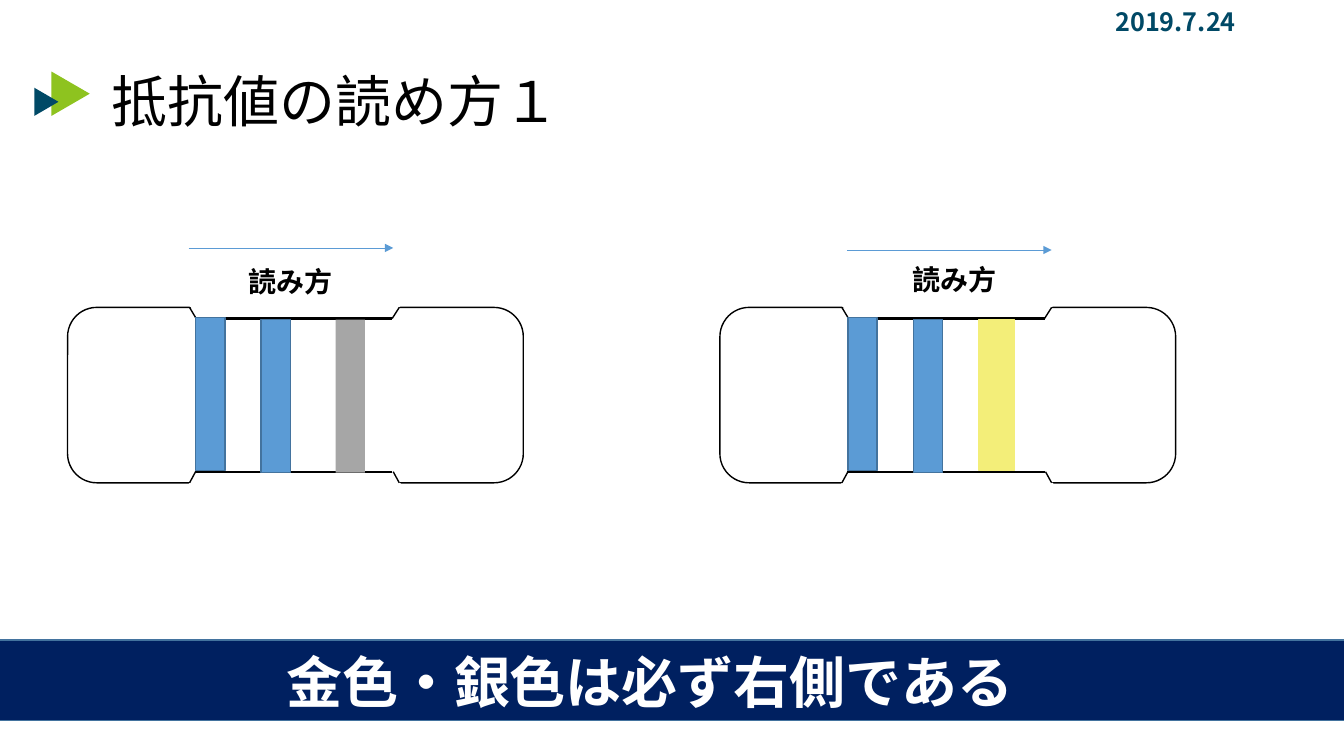
from dataclasses import dataclass
from typing import Any, Optional

from lxml import etree
from pptx import Presentation
from pptx.dml.color import RGBColor
from pptx.enum.shapes import MSO_CONNECTOR, MSO_SHAPE
from pptx.enum.text import MSO_ANCHOR, PP_ALIGN
from pptx.oxml.ns import qn
from pptx.util import Inches, Pt

RECT = MSO_SHAPE.RECTANGLE
ROUND_RECT = MSO_SHAPE.ROUNDED_RECTANGLE
SNIP_RECT = MSO_SHAPE.SNIP_2_SAME_RECTANGLE
TRIANGLE = MSO_SHAPE.ISOSCELES_TRIANGLE
STRAIGHT = MSO_CONNECTOR.STRAIGHT
TOP, BOTTOM = MSO_ANCHOR.TOP, MSO_ANCHOR.BOTTOM
LEFT, CENTER = PP_ALIGN.LEFT, PP_ALIGN.CENTER


@dataclass(frozen=True)
class Theme:
    black: str = "000000"
    white: str = "FFFFFF"
    green: str = "8EC31F"
    teal: str = "004966"
    navy: str = "002060"
    blue: str = "5B9BD5"
    blue_edge: str = "43739E"
    silver: str = "A6A6A6"
    gold: str = "F3EE79"
    title_font: str = "Calibri"
    date_font: str = "Noto Sans CJK SC"
    body_font: str = "Cabin"
    title_size: int = 40
    label_size: int = 20
    date_size: int = 18


T = Theme()


@dataclass(frozen=True)
class Box:
    x: float
    y: float
    w: float
    h: float


@dataclass(frozen=True)
class Band:
    """Colour band; the box is measured from the resistor's left edge."""
    box: Box
    fill: str
    edge: Optional[str] = None


@dataclass(frozen=True)
class Line:
    x1: float
    y1: float
    x2: float
    y2: float
    width: float = 1


@dataclass(frozen=True)
class Resistor:
    x: float
    bands: tuple[Band, ...]
    arrow_x: float
    arrow_y: float
    label_x: float
    label_y: float


@dataclass(frozen=True)
class Caption:
    text: str
    box: Box
    font: str
    size: int
    color: str
    bold: bool = True
    anchor: Any = BOTTOM
    align: Any = LEFT


BLUE_BANDS = (
    Band(Box(1.27, 3.15, 0.29, 1.52), T.blue, T.blue_edge),
    Band(Box(1.92, 3.17, 0.29, 1.52), T.blue, T.blue_edge),
)
RESISTORS = (
    Resistor(0.67, BLUE_BANDS + (Band(Box(2.66, 3.17, 0.29, 1.52), T.silver),),
             1.87, 2.46, 2.37, 2.08),
    Resistor(7.14, BLUE_BANDS + (Band(Box(2.57, 3.17, 0.35, 1.5), T.gold, T.gold),),
             8.4, 2.48, 8.95, 2.06),
)
# Outline of the narrow waist, measured from the resistor's left edge
WAIST = (
    Line(1.21, 3.05, 1.27, 3.15), Line(1.26, 3.16, 3.22, 3.16, 1.5),
    Line(3.29, 3.05, 3.22, 3.16),
    Line(1.27, 4.68, 1.21, 4.79), Line(1.26, 4.68, 3.22, 4.68, 1.5),
    Line(3.23, 4.68, 3.29, 4.79),
)
CAPTIONS = (
    Caption("抵抗値の読め方１", Box(1.01, 0.46, 8.76, 0.93),
            T.title_font, T.title_size, T.black, bold=False),
    Caption("2019.7.24", Box(9.74, 0.05, 3.84, 0.41),
            T.date_font, T.date_size, T.teal, anchor=TOP, align=CENTER),
    Caption("金色・銀色は必ず右側である", Box(2.74, 6.22, 8.76, 0.93),
            T.body_font, T.title_size, T.white),
) + tuple(
    Caption("読み方", Box(res.label_x, res.label_y, 8.76, 0.93),
            T.body_font, T.label_size, T.black)
    for res in RESISTORS
)


def add_shape(shapes: Any, kind: Any, box: Box, fill: str,
              edge: Optional[str] = None, rotation: float = 0) -> Any:
    sp = shapes.add_shape(kind, Inches(box.x), Inches(box.y),
                          Inches(box.w), Inches(box.h))
    sp.shadow.inherit = False
    sp.rotation = rotation
    sp.fill.solid()
    sp.fill.fore_color.rgb = RGBColor.from_string(fill)
    if edge:
        sp.line.color.rgb = RGBColor.from_string(edge)
        sp.line.width = Pt(1)
    else:
        sp.line.fill.background()
    return sp


def add_line(shapes: Any, line: Line, color: str, dx: float = 0,
             arrow: bool = False) -> None:
    cx = shapes.add_connector(STRAIGHT, Inches(line.x1 + dx), Inches(line.y1),
                              Inches(line.x2 + dx), Inches(line.y2))
    cx.line.color.rgb = RGBColor.from_string(color)
    cx.line.width = Pt(line.width)
    if arrow:
        etree.SubElement(cx.line._get_or_add_ln(), qn("a:tailEnd"), type="triangle")
    etree.SubElement(cx._element.spPr, qn("a:effectLst"))


def add_caption(shapes: Any, cap: Caption) -> None:
    box = cap.box
    tf = shapes.add_textbox(Inches(box.x), Inches(box.y),
                            Inches(box.w), Inches(box.h)).text_frame
    tf.word_wrap = True
    tf.vertical_anchor = cap.anchor
    p = tf.paragraphs[0]
    p.alignment = cap.align
    p.line_spacing = 0.9
    r = p.add_run()
    r.text = cap.text
    r.font.name = cap.font
    r.font.size = Pt(cap.size)
    r.font.bold = cap.bold
    r.font.color.rgb = RGBColor.from_string(cap.color)


def add_resistor(shapes: Any, res: Resistor) -> None:
    """Draw body, white cut-outs, waist outline and bands as one group."""
    parts = shapes.add_group_shape().shapes
    add_shape(parts, ROUND_RECT, Box(res.x, 3.05, 4.52, 1.74), T.white, T.black)
    for y, rotation in ((4.68, 0), (2.89, 180)):
        cut = add_shape(parts, SNIP_RECT, Box(res.x + 1.2, y, 2.11, 0.26),
                        T.white, rotation=rotation)
        cut.adjustments[0] = 0.473
    for line in WAIST:
        add_line(parts, line, T.black, dx=res.x)
    for band in res.bands:
        box = band.box
        add_shape(parts, RECT, Box(res.x + box.x, box.y, box.w, box.h),
                  band.fill, band.edge)


def main() -> None:
    prs = Presentation()
    prs.slide_width, prs.slide_height = Inches(13.33), Inches(7.5)
    s = prs.slides.add_slide(prs.slide_layouts[6])
    add_shape(s.shapes, TRIANGLE, Box(0.48, 0.74, 0.44, 0.38), T.green, rotation=90)
    add_shape(s.shapes, TRIANGLE, Box(0.32, 0.89, 0.28, 0.24), T.teal, rotation=90)
    add_shape(s.shapes, RECT, Box(-0.72, 6.35, 14.94, 0.8), T.navy, T.blue_edge)
    for res in RESISTORS:
        add_resistor(s.shapes, res)
        arrow = Line(res.arrow_x, res.arrow_y, res.arrow_x + 2.03, res.arrow_y, 0.5)
        add_line(s.shapes, arrow, T.blue, arrow=True)
    for cap in CAPTIONS:
        add_caption(s.shapes, cap)
    prs.save("out.pptx")


if __name__ == "__main__":
    main()
